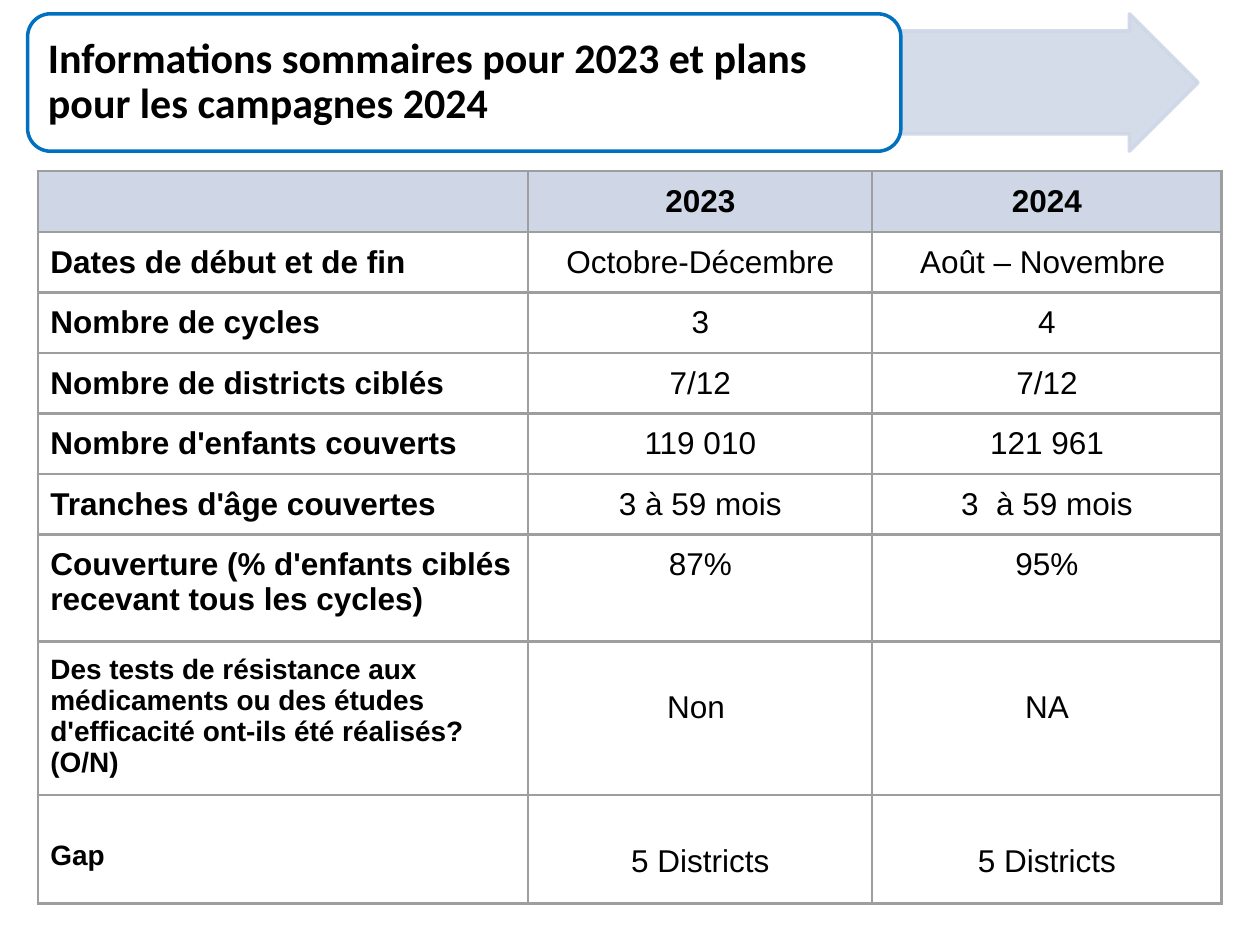
from lxml import etree
from pptx import Presentation
from pptx import util as u
from pptx.dml.color import RGBColor
from pptx.enum import shapes, text
from pptx.oxml import ns

Pt = u.Pt
COLOURS = {"pale": "CFD7E7", "blue": "0070C0", "white": "FFFFFF",
           "black": "000000", "border": "9E9E9E"}
CELL_MARGIN = 7.2
COLUMN_WIDTHS = [280.3, 196.6, 199.6]
ROW_HEIGHTS = [34.5] * 6 + [61.2, 87.8, 61.9]
ROWS = [
    ("", "2023", "2024"),
    ("Dates de début et de fin", "Octobre-Décembre", "Août – Novembre "),
    ("Nombre de cycles", "3", "4"),
    ("Nombre de districts ciblés", "7/12", "7/12"),
    ("Nombre d'enfants couverts", "119 010", "121 961"),
    ("Tranches d'âge couvertes", "3 à 59 mois", "3  à 59 mois"),
    ("Couverture (% d'enfants ciblés recevant tous les cycles)", "87%", "95%"),
    ("Des tests de résistance aux médicaments ou des études d'efficacité "
     "ont-ils été réalisés? (O/N)", "Non ", "NA"),
    ("Gap", "5 Districts", "5 Districts"),
]
SMALL_LABEL_ROWS = (7, 8)
# Extra top margin, about one line, for cells whose text sits lower
LOWERED = {(7, 1): 20.7, (7, 2): 20.7, (8, 0): 18.4, (8, 1): 20.7, (8, 2): 20.7}


def colour(name):
    return RGBColor.from_string(COLOURS[name])


def set_alpha(fill_element, percent):
    for colour_element in fill_element.iter(ns.qn("a:srgbClr")):
        alpha = etree.SubElement(colour_element, ns.qn("a:alpha"))
        alpha.set("val", str(percent * 1000))


def add_run(paragraph, content, font, size, bold):
    run = paragraph.add_run()
    run.text = content
    run.font.name = font
    run.font.size = Pt(size)
    run.font.bold = bold
    run.font.color.rgb = colour("black")


def add_box(slide, kind, bounds, fill, line):
    shape = slide.shapes.add_shape(kind, *(Pt(value) for value in bounds))
    shape.shadow.inherit = False
    shape.fill.solid()
    shape.fill.fore_color.rgb = colour(fill)
    shape.line.color.rgb = colour(line)
    shape.line.width = Pt(2)
    return shape


def add_title(slide):
    arrow = add_box(slide, shapes.MSO_SHAPE.RIGHT_ARROW,
                    (514.8, 7.9, 169.9, 78.5), "pale", "pale")
    arrow.adjustments[0] = 0.75
    set_alpha(arrow._element.spPr, 89)

    box = add_box(slide, shapes.MSO_SHAPE.ROUNDED_RECTANGLE,
                  (15.8, 7.9, 499, 78.5), "white", "blue")
    frame = box.text_frame
    frame.word_wrap = True
    frame.vertical_anchor = text.MSO_ANCHOR.MIDDLE
    frame.margin_left = frame.margin_right = Pt(7.8)
    paragraph = frame.paragraphs[0]
    paragraph.alignment = text.PP_ALIGN.LEFT
    paragraph.line_spacing = 0.9
    add_run(paragraph, "Informations sommaires pour 2023 et plans pour les campagnes 2024",
            "Calibri", 24, True)


def add_borders(cell):
    properties = cell._tc.get_or_add_tcPr()
    for index, side in enumerate(("lnL", "lnR", "lnT", "lnB")):
        line = etree.Element(ns.qn("a:" + side), w=str(Pt(1.5)))
        fill = etree.SubElement(line, ns.qn("a:solidFill"))
        etree.SubElement(fill, ns.qn("a:srgbClr"), val=COLOURS["border"])
        properties.insert(index, line)


def fill_cell(cell, content, row, column):
    cell.fill.solid()
    cell.fill.fore_color.rgb = colour("white" if row else "pale")
    add_borders(cell)
    if not content:
        return
    cell.margin_left = cell.margin_right = cell.margin_bottom = Pt(CELL_MARGIN)
    cell.margin_top = Pt(CELL_MARGIN + LOWERED.get((row, column), 0))
    paragraph = cell.text_frame.paragraphs[0]
    paragraph.alignment = text.PP_ALIGN.CENTER if column else text.PP_ALIGN.LEFT
    size = 16 if column == 0 and row in SMALL_LABEL_ROWS else 18
    add_run(paragraph, content, "Arial", size, row == 0 or column == 0)


def add_campaign_table(slide):
    frame = slide.shapes.add_table(len(ROWS), len(COLUMN_WIDTHS), Pt(21.6), Pt(97.9),
                                   Pt(sum(COLUMN_WIDTHS)), Pt(sum(ROW_HEIGHTS)))
    table = frame.table
    table.horz_banding = False
    for column, width in zip(table.columns, COLUMN_WIDTHS):
        column.width = Pt(width)
    for row, height in zip(table.rows, ROW_HEIGHTS):
        row.height = Pt(height)
    for row, contents in enumerate(ROWS):
        for column, content in enumerate(contents):
            fill_cell(table.cell(row, column), content, row, column)


def main():
    presentation = Presentation()
    presentation.slide_width = Pt(720)
    presentation.slide_height = Pt(540)
    slide = presentation.slides.add_slide(presentation.slide_layouts[6])
    add_title(slide)
    add_campaign_table(slide)
    presentation.save("out.pptx")


if __name__ == "__main__":
    main()
